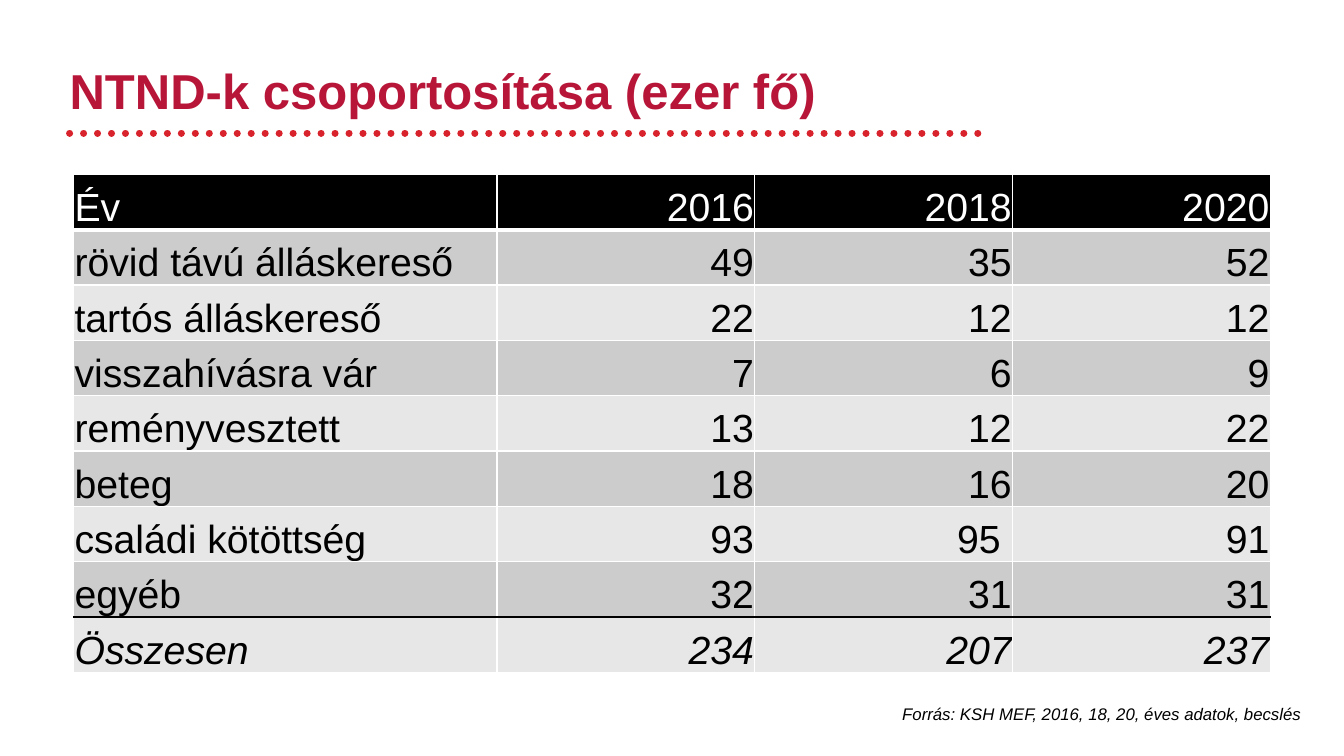
from lxml.etree import SubElement
from pptx import Presentation
from pptx.dml.color import RGBColor
from pptx.enum.dml import MSO_LINE
from pptx.enum.shapes import MSO_CONNECTOR
from pptx.enum.text import MSO_ANCHOR, PP_ALIGN
from pptx.oxml.ns import qn
from pptx.util import Inches, Pt

WHITE, BLACK = "FFFFFF", "000000"
CRIMSON, RED = "B81639", "D8222C"
BANDS = ("CCCCCC", "E7E7E7")

HEADER = ("Év", "2016", "2018", "2020")
GROUPS = (
    ("rövid távú álláskereső", "49", "35", "52"),
    ("tartós álláskereső", "22", "12", "12"),
    ("visszahívásra vár", "7", "6", "9"),
    ("reményvesztett", "13", "12", "22"),
    ("beteg", "18", "16", "20"),
    ("családi kötöttség", "93", "95 ", "91"),
    ("egyéb", "32", "31", "31"),
)
TOTAL = ("Összesen", "234", "207", "237")


def color(hex_value):
    return RGBColor.from_string(hex_value)


def write(para, text, size, hex_value, **formats):
    span = para.add_run()
    span.text = text
    values = {"name": "Arial", "size": Pt(size), **formats}
    for name, value in values.items():
        setattr(span.font, name, value)
    span.font.color.rgb = color(hex_value)


def add_text(page, box, text, size, hex_value, frame_formats, **formats):
    frame = page.shapes.add_textbox(*map(Inches, box)).text_frame
    for name, value in {"word_wrap": True, **frame_formats}.items():
        setattr(frame, name, value)
    write(frame.paragraphs[0], text, size, hex_value, **formats)


def add_heading(page, box):
    """Place the title and the dotted rule below it."""
    left, top, width, height = box
    margins = {f"margin_{side}": 0 for side in ("left", "top", "right", "bottom")}
    add_text(page, box, "NTND-k csoportosítása (ezer fő)", 35, CRIMSON,
             {"vertical_anchor": MSO_ANCHOR.MIDDLE, **margins}, bold=True)
    rule_y = Inches(top + height + 0.13)
    rule = page.shapes.add_connector(MSO_CONNECTOR.STRAIGHT, Inches(left), rule_y,
                                     Inches(left + width), rule_y)
    rule.line.color.rgb = color(RED)
    rule.line.width = Pt(5)
    rule.line.dash_style = MSO_LINE.ROUND_DOT
    rule.line._get_or_add_ln().set("cap", "rnd")
    SubElement(rule._element.spPr, qn("a:effectLst"))


def add_borders(cell, top, bottom):
    """Draw the cell's four edges; top and bottom are (colour, points)."""
    side = (WHITE, 1)
    edges = {"lnL": side, "lnR": side, "lnT": top, "lnB": bottom}
    properties = cell._tc.get_or_add_tcPr()
    for tag, (hex_value, points) in edges.items():
        edge = SubElement(properties, qn(f"a:{tag}"), w=str(Pt(points)))
        fill = SubElement(edge, qn("a:solidFill"))
        SubElement(fill, qn("a:srgbClr"), val=hex_value)


def add_group_table(page, box):
    rows = (HEADER, *GROUPS, TOTAL)
    last = len(rows) - 1
    label_width = 4.2
    value_width = (box[2] - label_width) / (len(HEADER) - 1)
    # One rule above each row, and one below the last.
    rules = [(WHITE, 1)] * (len(rows) + 1)
    rules[1] = (WHITE, 3)
    rules[last] = (BLACK, 1)

    table = page.shapes.add_table(len(rows), len(HEADER), *map(Inches, box)).table
    for index, column in enumerate(table.columns):
        column.width = Inches(value_width if index else label_width)
    cell_formats = {
        "margin_left": Inches(0.01), "margin_top": Inches(0.01),
        "margin_right": Inches(0.01), "margin_bottom": 0,
        "vertical_anchor": MSO_ANCHOR.BOTTOM,
    }
    for row_index, row in enumerate(rows):
        is_header = row_index == 0
        background = BLACK if is_header else BANDS[(row_index - 1) % 2]
        for column_index, text in enumerate(row):
            cell = table.cell(row_index, column_index)
            for name, value in cell_formats.items():
                setattr(cell, name, value)
            add_borders(cell, rules[row_index], rules[row_index + 1])
            cell.fill.solid()
            cell.fill.fore_color.rgb = color(background)
            para = cell.text_frame.paragraphs[0]
            para.alignment = PP_ALIGN.RIGHT if column_index else PP_ALIGN.LEFT
            write(para, text, 28, WHITE if is_header else BLACK,
                  bold=False, italic=row_index == last)


def add_source_note(page, box):
    add_text(page, box, "Forrás: KSH MEF, 2016, 18, 20, éves adatok, becslés",
             12, BLACK, {}, italic=True)


def main():
    deck = Presentation()
    deck.slide_width, deck.slide_height = Inches(13.33), Inches(7.5)
    page = deck.slides.add_slide(deck.slide_layouts[6])
    add_heading(page, (0.69, 0.6, 9.12, 0.59))
    add_group_table(page, (0.73, 1.73, 11.87, 4.94))
    add_source_note(page, (8.85, 6.93, 4.26, 0.3))
    deck.save("out.pptx")


if __name__ == "__main__":
    main()
